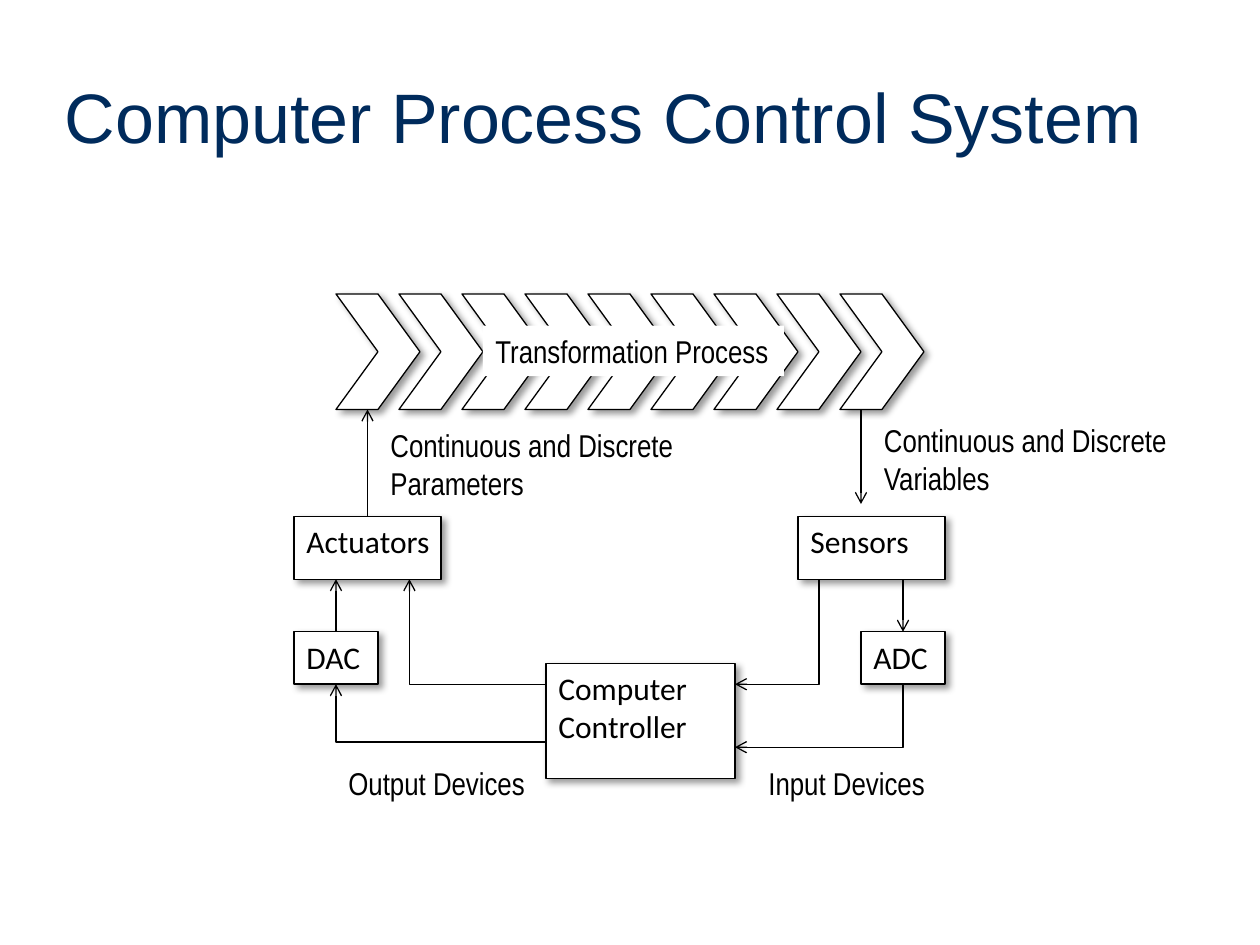
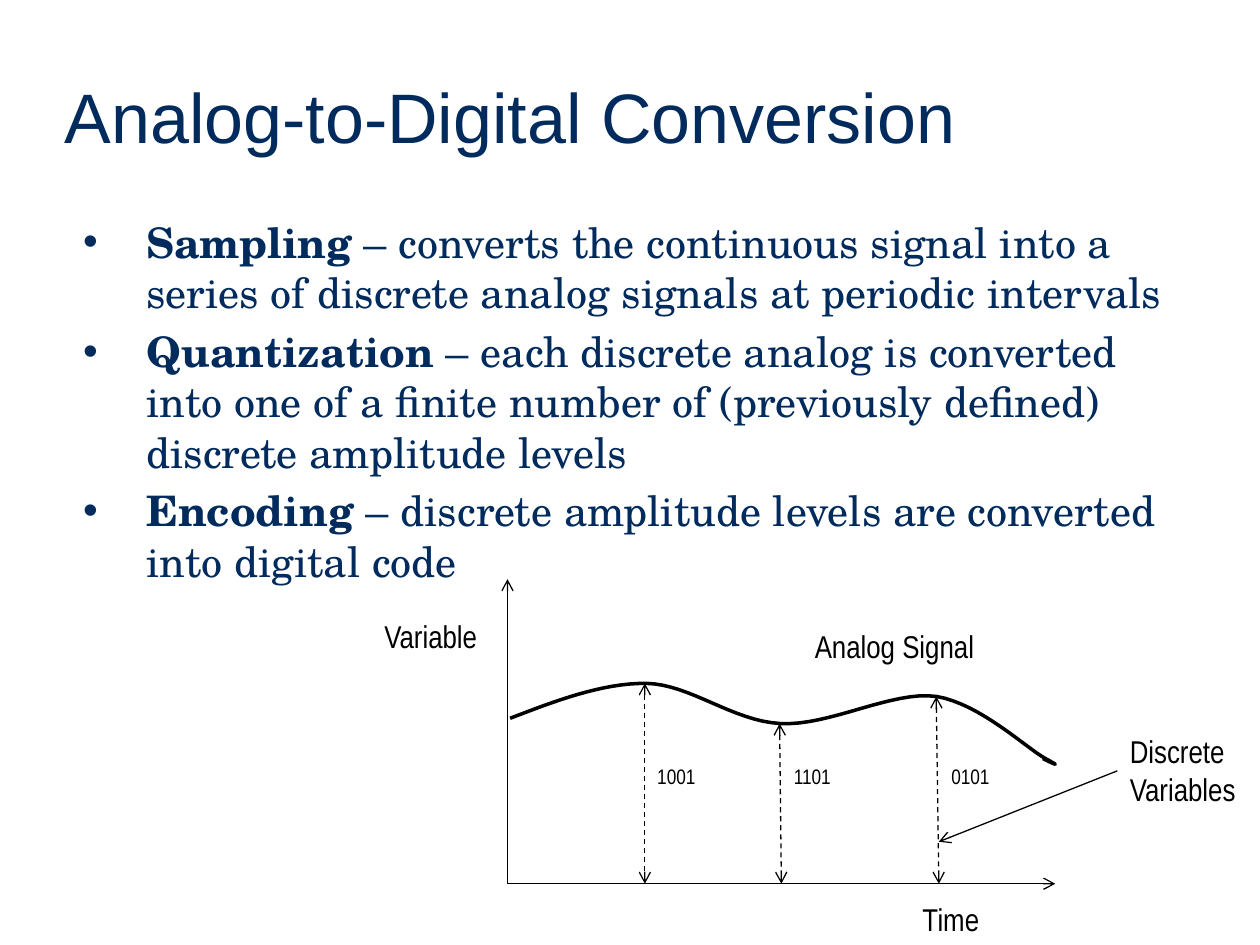
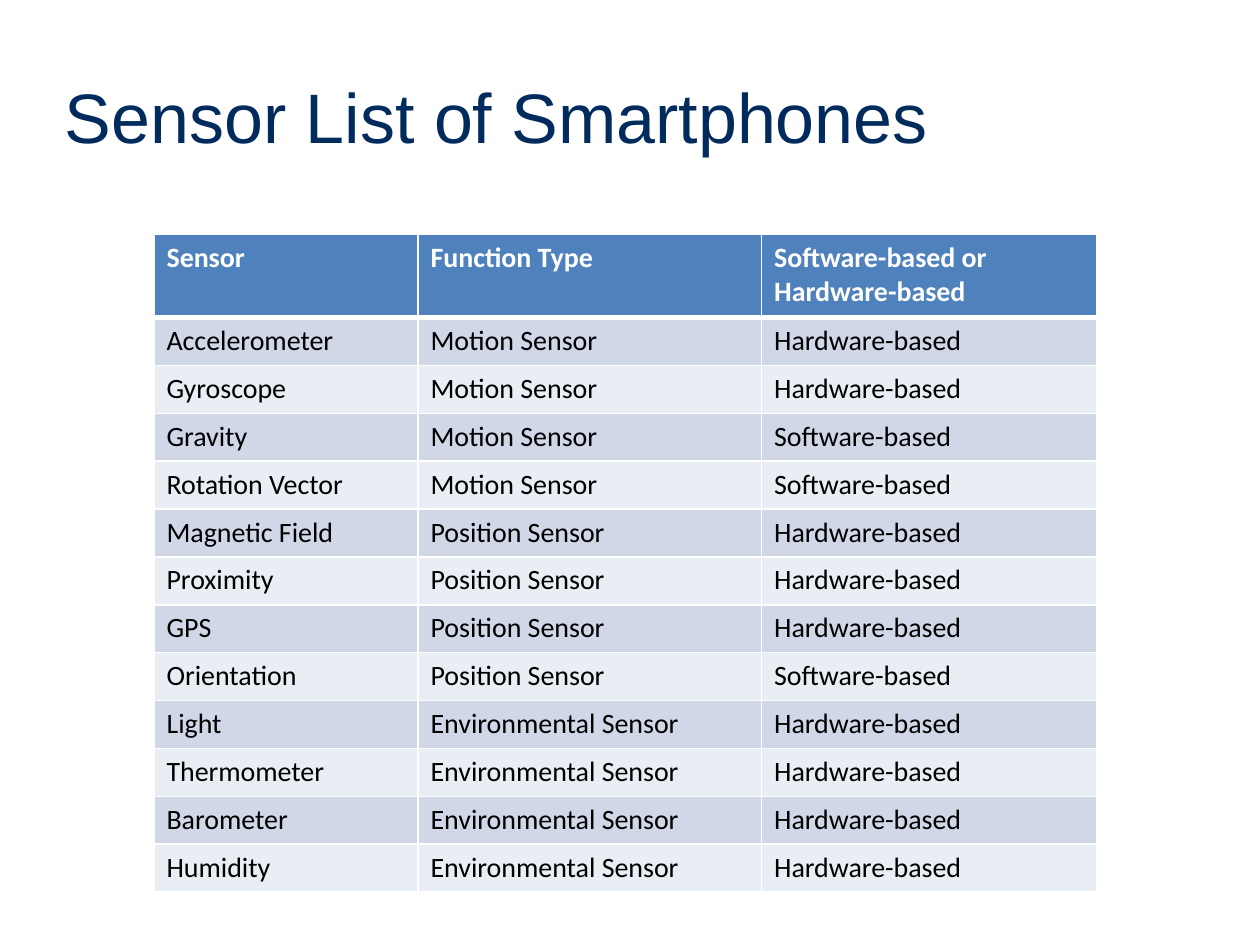
from lxml import etree
from pptx import Presentation
from pptx.dml.color import RGBColor
from pptx.enum import dml, shapes, text
from pptx.oxml import parse_xml
from pptx.oxml.ns import nsdecls, qn
from pptx.util import Pt

NAVY = RGBColor(0x00, 0x2B, 0x5C)
BLACK = RGBColor(0x00, 0x00, 0x00)
WHITE = RGBColor(0xFF, 0xFF, 0xFF)
HEADER_BLUE = RGBColor(0x4F, 0x81, 0xBD)
BAND_COLORS = (RGBColor(0xD0, 0xD8, 0xE8), RGBColor(0xE9, 0xED, 0xF4))

TITLE = {"name": "Arial", "size": Pt(40), "color": NAVY}
BODY = {"name": "TeX Gyre Schola", "size": Pt(24), "color": NAVY}
LABEL = {"name": "Arial Narrow", "size": Pt(18), "color": BLACK}
CODE = {**LABEL, "size": Pt(12)}
NODE = {"name": "Calibri", "size": Pt(18), "color": BLACK}
CELL = {**NODE, "size": Pt(16)}
HEADER = {**CELL, "color": WHITE, "bold": True}

SHADOW = (
    f'<a:effectLst {nsdecls("a")}><a:outerShdw blurRad="{Pt(4)}" dist="{Pt(3)}" dir="2700000" '
    'algn="tl" rotWithShape="0"><a:srgbClr val="000000"><a:alpha val="40000"/></a:srgbClr>'
    "</a:outerShdw></a:effectLst>"
)


def style_font(font, style):
    for key, value in style.items():
        if key == "color":
            font.color.rgb = value
        else:
            setattr(font, key, value)


def bezier_points(start, curves, steps=16):
    points = [start]
    for first, second, end in curves:
        origin = points[-1]
        for step in range(1, steps + 1):
            t = step / steps
            weights = ((1 - t) ** 3, 3 * t * (1 - t) ** 2, 3 * t * t * (1 - t), t ** 3)
            knots = (origin, first, second, end)
            points.append(tuple(sum(w * k[axis] for w, k in zip(weights, knots)) for axis in (0, 1)))
    return points


class Deck:
    def __init__(self):
        self.presentation = Presentation()
        self.presentation.slide_width = Pt(720)
        self.presentation.slide_height = Pt(540)
        self.slide = None

    def new_slide(self, title):
        self.slide = self.presentation.slides.add_slide(self.presentation.slide_layouts[6])
        frame = self.text_box((30, 30, 654, 72), [title], TITLE, wrap=True, grow=False)
        frame.vertical_anchor = text.MSO_ANCHOR.MIDDLE

    def set_lines(self, frame, lines, style, wrap):
        frame.word_wrap = wrap
        frame.vertical_anchor = text.MSO_ANCHOR.TOP
        for index, line in enumerate(lines):
            paragraph = frame.add_paragraph() if index else frame.paragraphs[0]
            paragraph.alignment = text.PP_ALIGN.LEFT
            run = paragraph.add_run()
            run.text = line
            style_font(run.font, style)

    def text_box(self, box, lines, style=LABEL, wrap=False, grow=True):
        frame = self.slide.shapes.add_textbox(*map(Pt, box)).text_frame
        self.set_lines(frame, lines, style, wrap)
        if grow:
            frame.auto_size = text.MSO_AUTO_SIZE.SHAPE_TO_FIT_TEXT
        return frame

    def bullets(self, box, items):
        frame = self.slide.shapes.add_textbox(*map(Pt, box)).text_frame
        frame.word_wrap = True
        for index, (term, meaning) in enumerate(items):
            paragraph = frame.add_paragraph() if index else frame.paragraphs[0]
            properties = paragraph._p.get_or_add_pPr()
            properties.set("marL", str(Pt(40.5)))
            properties.set("indent", str(Pt(-36)))
            etree.SubElement(properties, qn("a:buFont")).set("typeface", "Arial")
            etree.SubElement(properties, qn("a:buChar")).set("char", "•")
            if index:
                paragraph.space_before = Pt(4.8)
            for words, bold in ((term, True), (f" – {meaning}", False)):
                run = paragraph.add_run()
                run.text = words
                style_font(run.font, {**BODY, "bold": bold})

    def outline(self, shape, width):
        shape.shadow.inherit = False
        shape.fill.solid()
        shape.fill.fore_color.rgb = WHITE
        shape.line.color.rgb = BLACK
        shape.line.width = Pt(width)

    def shape(self, kind, box, lines=(), style=NODE):
        shape = self.slide.shapes.add_shape(kind, *map(Pt, box))
        self.outline(shape, 0.75)
        properties = shape._element.spPr
        properties.remove(properties.find(qn("a:effectLst")))
        properties.append(parse_xml(SHADOW))
        self.set_lines(shape.text_frame, lines, style, wrap=False)

    def curve(self, start, curves):
        points = [(Pt(x), Pt(y)) for x, y in bezier_points(start, curves)]
        builder = self.slide.shapes.build_freeform(*points[0])
        builder.add_line_segments(points[1:], close=False)
        self.outline(builder.convert_to_shape(), 2)

    def arrow(self, start, end, ends=("tailEnd",), dashed=False, bent=False):
        kind = shapes.MSO_CONNECTOR.ELBOW if bent else shapes.MSO_CONNECTOR.STRAIGHT
        connector = self.slide.shapes.add_connector(kind, *map(Pt, start + end))
        connector.line.color.rgb = BLACK
        connector.line.width = Pt(0.75)
        if dashed:
            connector.line.dash_style = dml.MSO_LINE.DASH
        properties = connector._element.spPr
        if bent:
            properties.find(qn("a:prstGeom")).set("prst", "bentConnector2")
        for name in ends:
            etree.SubElement(properties.find(qn("a:ln")), qn(f"a:{name}")).set("type", "arrow")
        etree.SubElement(properties, qn("a:effectLst"))

    def table(self, box, widths, heights, rows):
        frame = self.slide.shapes.add_table(len(rows), len(widths), *map(Pt, box))
        table = frame.table
        for column, width in zip(table.columns, widths):
            column.width = Pt(width)
        for index, (row, height, values) in enumerate(zip(table.rows, heights, rows)):
            row.height = Pt(height)
            fill = BAND_COLORS[(index - 1) % 2] if index else HEADER_BLUE
            for cell, value in zip(row.cells, values):
                self.set_lines(cell.text_frame, [value], CELL if index else HEADER, wrap=True)
                self.borders(cell, top=1 if index != 1 else 3, bottom=1 if index else 3)
                cell.fill.solid()
                cell.fill.fore_color.rgb = fill

    def borders(self, cell, top, bottom):
        properties = cell._tc.get_or_add_tcPr()
        for side, width in (("L", 1), ("R", 1), ("T", top), ("B", bottom)):
            properties.append(parse_xml(
                f'<a:ln{side} {nsdecls("a")} w="{Pt(width)}"><a:solidFill>'
                f'<a:srgbClr val="{WHITE}"/></a:solidFill></a:ln{side}>'
            ))


def control_system(deck):
    deck.new_slide("Computer Process Control System")
    for index in range(9):
        deck.shape(shapes.MSO_SHAPE.CHEVRON, (192 + 36 * index, 168, 48, 66))
    process = deck.slide.shapes.add_textbox(*map(Pt, (276, 186, 172, 29)))
    process.fill.solid()
    process.fill.fore_color.rgb = WHITE
    deck.set_lines(process.text_frame, ["Transformation Process"], LABEL, wrap=True)

    nodes = (
        ((168, 295, 84, 36), ["Actuators"]),
        ((456, 295, 84, 36), ["Sensors"]),
        ((168, 361, 48, 30), ["DAC"]),
        ((492, 361, 48, 30), ["ADC"]),
        ((312, 379, 108, 66), ["Computer", "Controller"]),
    )
    for box, lines in nodes:
        deck.shape(shapes.MSO_SHAPE.RECTANGLE, box, lines)

    straight_arrows = (
        ((210, 295), (210, 234)),
        ((492, 234), (492, 288)),
        ((192, 361), (192, 331)),
        ((516, 331), (516, 361)),
    )
    for start, end in straight_arrows:
        deck.arrow(start, end)
    controller_links = (
        ((312, 424), (192, 391), "tailEnd"),
        ((312, 391), (234, 331), "tailEnd"),
        ((420, 391), (468, 331), "headEnd"),
        ((420, 427), (516, 391), "headEnd"),
    )
    for controller, device, arrow_end in controller_links:
        deck.arrow(controller, device, (arrow_end,), bent=True)

    labels = (
        ((432, 433, 105, 29), ["Input Devices"]),
        ((192, 433, 117, 29), ["Output Devices"]),
        ((498, 237, 178, 51), ["Continuous and Discrete", "Variables"]),
        ((216, 240, 178, 51), ["Continuous and Discrete", "Parameters"]),
    )
    for box, lines in labels:
        deck.text_box(box, lines)


def conversion(deck):
    deck.new_slide("Analog-to-Digital Conversion")
    deck.bullets((36, 120, 648, 362), (
        ("Sampling", "converts the continuous signal into a series of discrete analog signals "
                     "at periodic intervals"),
        ("Quantization", "each discrete analog is converted into one of a finite number of "
                         "(previously defined) discrete amplitude levels"),
        ("Encoding", "discrete amplitude levels are converted into digital code"),
    ))
    origin = (290, 505)
    for axis_end in ((290, 331), (603, 505)):
        deck.arrow(origin, axis_end)
    deck.curve((291.5, 410.5), (
        ((317.5, 400.5), (343.5, 390.5), (369, 390.5)),
        ((394.5, 391), (418.5, 412), (446, 413.5)),
        ((474, 415), (510, 394.5), (535, 398)),
        ((560, 402), (587, 428), (597.5, 433.5)),
        ((607.5, 439), (602, 436.5), (596, 433.5)),
    ))
    samples = (
        ("1001", (368.5, 390.5), 368.5),
        ("1101", (445.5, 413.5), 446.5),
        ("0101", (535, 398), 536.5),
    )
    for code, peak, foot in samples:
        deck.arrow(peak, (foot, 505), ("headEnd", "tailEnd"), dashed=True)
        deck.text_box((foot, 433, 36.5, 22), [code], CODE)
    labels = (
        ((212.5, 349, 68.5, 29), ["Variable"]),
        ((520, 511, 47.5, 29), ["Time"]),
        ((458.5, 355, 106.5, 29), ["Analog Signal"]),
        ((638.5, 415, 75.5, 51), ["Discrete", "Variables"]),
    )
    for box, lines in labels:
        deck.text_box(box, lines)
    deck.arrow((638.5, 440.5), (536.5, 481))


def sensor_list(deck):
    deck.new_slide("Sensor List of Smartphones")
    hardware, software = "Hardware-based", "Software-based"
    groups = (
        ("Motion Sensor", (("Accelerometer", hardware), ("Gyroscope", hardware),
                           ("Gravity", software), ("Rotation Vector", software))),
        ("Position Sensor", (("Magnetic Field", hardware), ("Proximity", hardware),
                             ("GPS", hardware), ("Orientation", software))),
        ("Environmental Sensor", (("Light", hardware), ("Thermometer", hardware),
                                  ("Barometer", hardware), ("Humidity", hardware))),
    )
    rows = [("Sensor", "Function Type", "Software-based or Hardware-based")]
    rows += [(sensor, function, base) for function, sensors in groups for sensor, base in sensors]
    heights = [47.5] + [27.36] * (len(rows) - 1)
    deck.table((88, 134, 538.6, 375.8), (150.9, 196.3, 191.4), heights, rows)


def main():
    deck = Deck()
    for build in (control_system, conversion, sensor_list):
        build(deck)
    deck.presentation.save("out.pptx")


if __name__ == "__main__":
    main()
